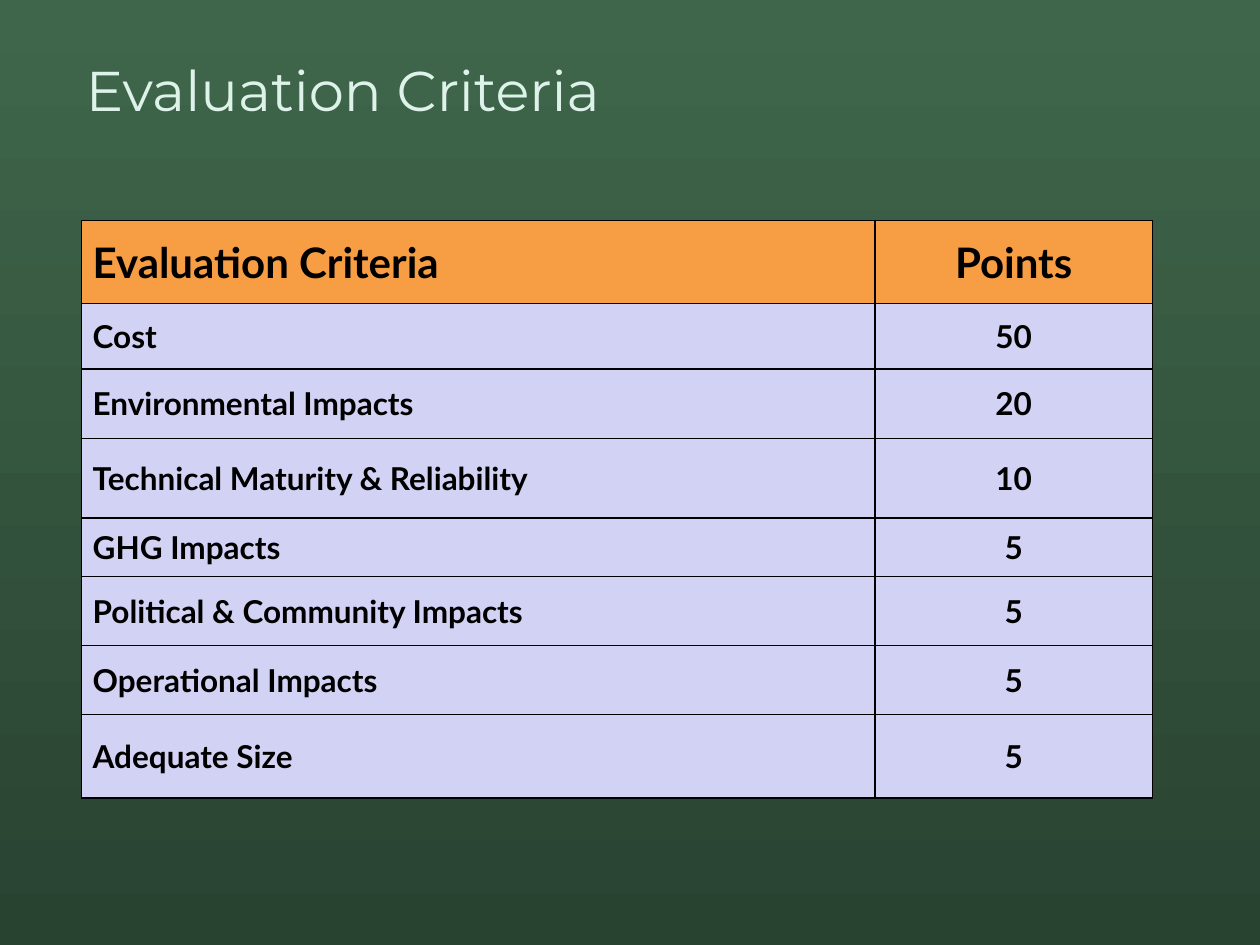
from dataclasses import dataclass

from lxml import etree
from pptx import Presentation
from pptx import util as u
from pptx.dml.color import RGBColor
from pptx.enum import text
from pptx.oxml.ns import qn


@dataclass(frozen=True)
class Theme:
    top: str = "3F664B"
    bottom: str = "294331"
    title: str = "DDF3EA"
    ink: str = "000000"
    header: str = "F79D43"
    body: str = "D2D2F4"
    title_font: str = "Montserrat"
    table_font: str = "Lato"
    title_size: int = 32
    header_size: int = 24
    body_size: int = 18
    border: int = 1


THEME = Theme()

CRITERIA = [
    ("Evaluation Criteria", "Points"),
    ("Cost", "50"),
    ("Environmental Impacts", "20"),
    ("Technical Maturity & Reliability", "10"),
    ("GHG Impacts", "5"),
    ("Political & Community Impacts", "5"),
    ("Operational Impacts", "5"),
    ("Adequate Size", "5"),
]
ROW_HEIGHTS = [47.5, 37.5, 39.5, 45.5, 33.5, 39.5, 39.5, 47.5]
COLUMN_WIDTHS = [453.5, 158.5]


def write(frame, words, *, font, size, color, bold=False,
          align=text.PP_ALIGN.LEFT, line_spacing=None):
    """Put one formatted paragraph into a text frame."""
    para = frame.paragraphs[0]
    para.alignment = align
    if line_spacing:
        para.line_spacing = u.Pt(line_spacing)
    span = para.add_run()
    span.text = words
    span.font.name = font
    span.font.size = u.Pt(size)
    span.font.bold = bold
    span.font.color.rgb = RGBColor.from_string(color)


def paint_background(page):
    fill = page.background.fill
    fill.gradient()
    fill.gradient_angle = 270  # counter-clockwise, so top to bottom
    for stop, color in zip(fill.gradient_stops, (THEME.top, THEME.bottom)):
        stop.color.rgb = RGBColor.from_string(color)
    for stop, position in zip(fill.gradient_stops, (0, 1)):
        stop.position = position


def add_title(page, words):
    box = page.shapes.add_textbox(u.Pt(42), u.Pt(0), u.Pt(595.5), u.Pt(73.5))
    frame = box.text_frame
    frame.word_wrap = True
    frame.vertical_anchor = text.MSO_ANCHOR.BOTTOM
    write(frame, words, font=THEME.title_font, size=THEME.title_size,
          color=THEME.title, line_spacing=THEME.title_size)


def set_borders(cell):
    """Draw all four cell edges; they must come before the fill in the XML."""
    properties = cell._tc.get_or_add_tcPr()
    for index, edge in enumerate(("a:lnL", "a:lnR", "a:lnT", "a:lnB")):
        line = etree.Element(qn(edge), w=str(u.Pt(THEME.border)))
        solid = etree.SubElement(line, qn("a:solidFill"))
        etree.SubElement(solid, qn("a:srgbClr"), val=THEME.ink)
        properties.insert(index, line)


def add_criteria_table(page, rows):
    table = page.shapes.add_table(
        len(rows), len(COLUMN_WIDTHS), u.Pt(46.5), u.Pt(126),
        u.Pt(sum(COLUMN_WIDTHS)), u.Pt(sum(ROW_HEIGHTS))).table
    for column, width in zip(table.columns, COLUMN_WIDTHS):
        column.width = u.Pt(width)
    for row, height in zip(table.rows, ROW_HEIGHTS):
        row.height = u.Pt(height)

    for row_index, row in enumerate(rows):
        is_header = row_index == 0
        for column_index, words in enumerate(row):
            cell = table.cell(row_index, column_index)
            cell.vertical_anchor = text.MSO_ANCHOR.MIDDLE
            cell.margin_left = cell.margin_right = u.Pt(6.5)
            cell.margin_top = cell.margin_bottom = u.Pt(3.6)
            cell.fill.solid()
            cell.fill.fore_color.rgb = RGBColor.from_string(
                THEME.header if is_header else THEME.body)
            set_borders(cell)
            write(cell.text_frame, words, font=THEME.table_font, bold=True,
                  size=THEME.header_size if is_header else THEME.body_size,
                  color=THEME.ink,
                  align=text.PP_ALIGN.CENTER if column_index
                  else text.PP_ALIGN.LEFT)


def main():
    deck = Presentation()
    deck.slide_width, deck.slide_height = u.Pt(720), u.Pt(540)
    page = deck.slides.add_slide(deck.slide_layouts[6])

    # Background, criteria table, title
    paint_background(page)
    add_criteria_table(page, CRITERIA)
    add_title(page, "Evaluation Criteria")

    deck.save("out.pptx")


if __name__ == "__main__":
    main()
